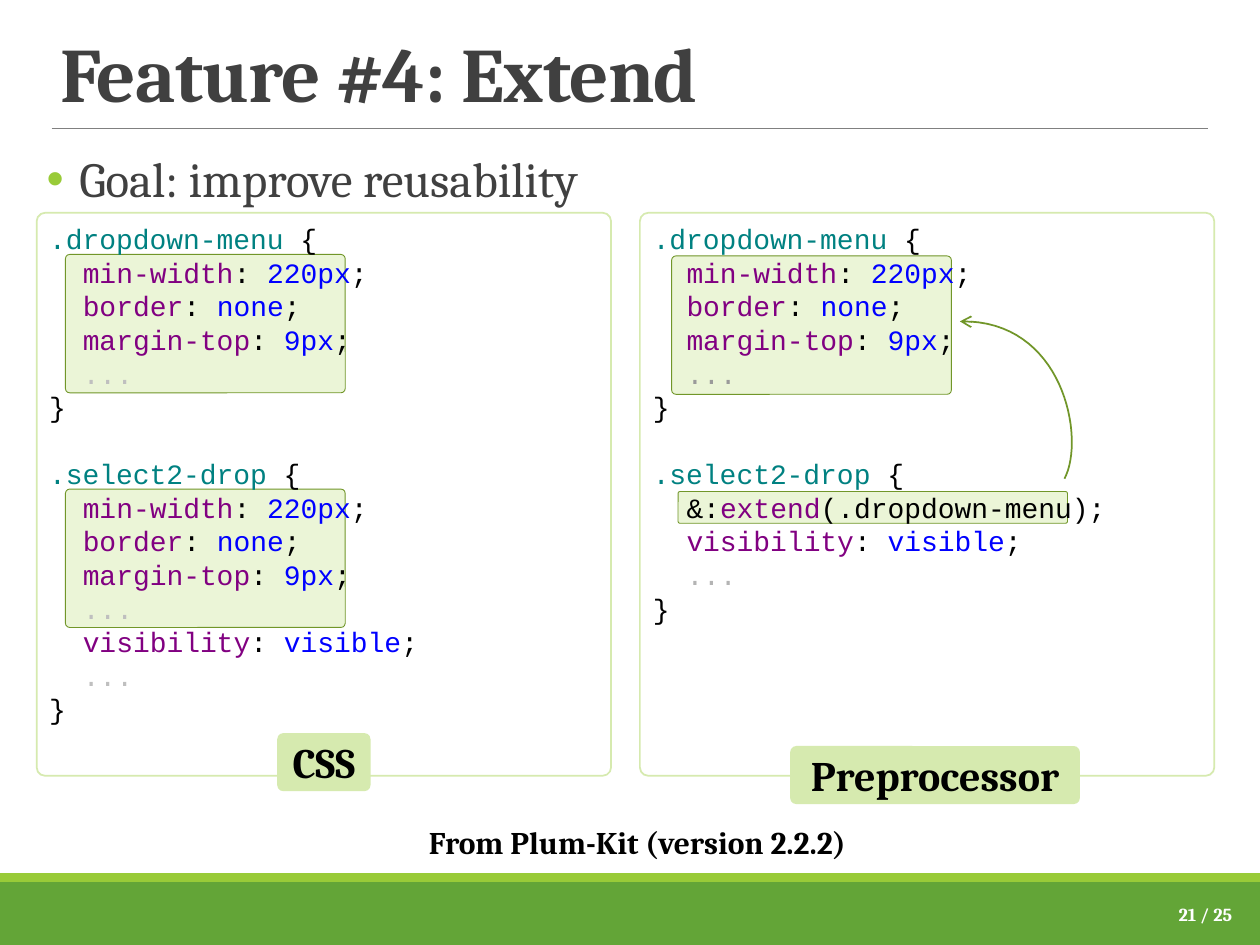
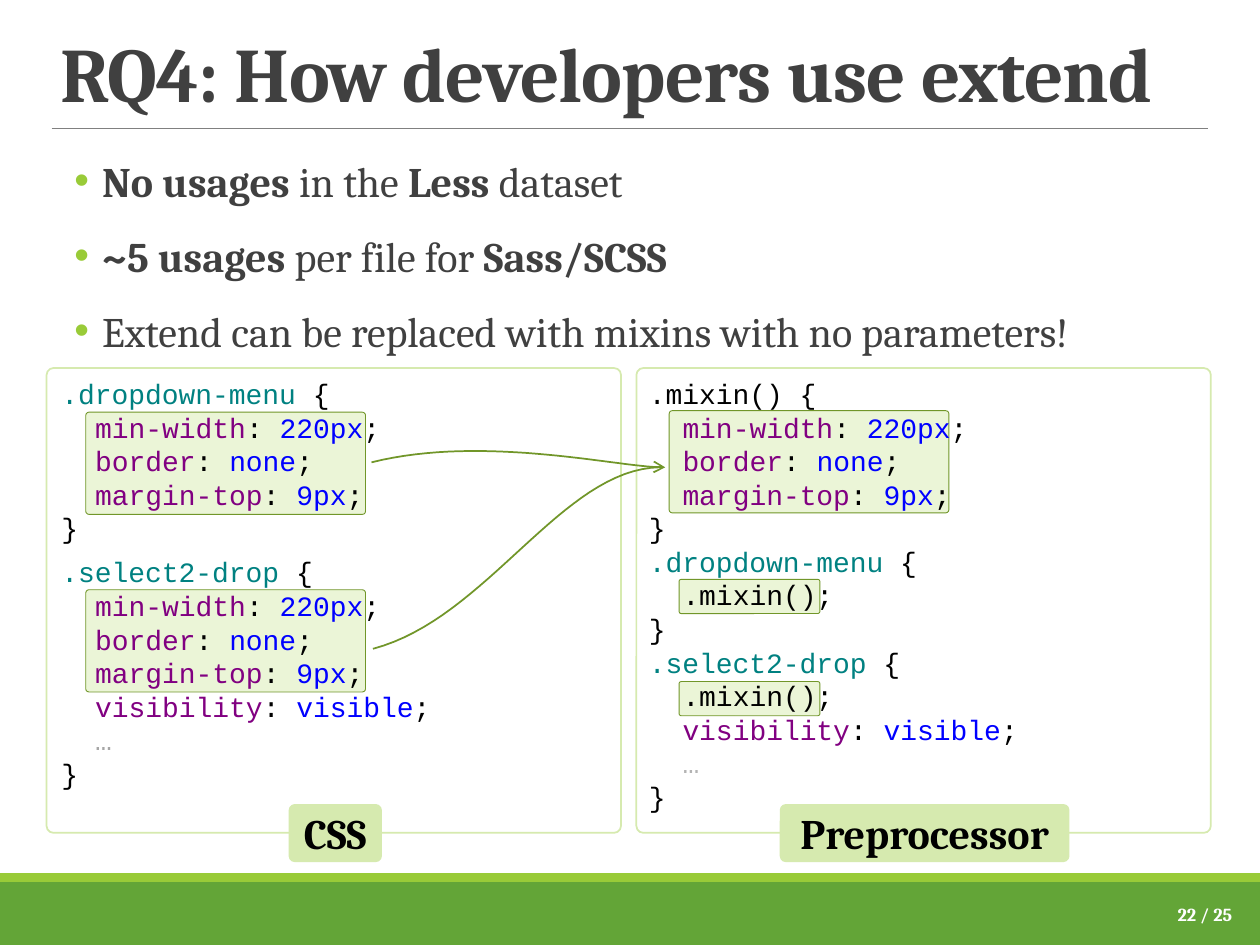
from dataclasses import dataclass
from pptx import Presentation
from pptx.dml.color import RGBColor
from pptx.enum.shapes import MSO_CONNECTOR, MSO_SHAPE
from pptx.enum.text import MSO_ANCHOR, PP_ALIGN
from pptx.oxml.ns import qn
from pptx.util import Cm, Pt
from lxml.etree import SubElement


@dataclass(frozen=True)
class Theme:
    green: str = "63A537"
    lime: str = "99CB38"
    edge: str = "719629"
    pale: str = "EBF5D7"
    soft: str = "D6EAAF"
    rule: str = "808080"
    dark: str = "404040"
    ink: str = "000000"
    white: str = "FFFFFF"
    name: str = "008181"
    prop: str = "810081"
    value: str = "0000FF"
    serif: str = "Cambria"
    mono: str = "Courier New"
    dot: str = "Arial"
    title: float = 44
    lead: float = 28
    item: float = 24
    note: float = 18
    code: float = 16
    page: float = 10.5
    pitch: float = 19.2


THEME = Theme()


def color(code):
    return RGBColor.from_string(code)


def write(par, text, size=THEME.code, ink=THEME.ink, font=THEME.serif, bold=False, space=None):
    run = par.add_run()
    run.text = text
    run.font.size = Pt(size)
    run.font.name = font
    run.font.bold = bold
    run.font.color.rgb = color(ink)
    if space is not None:
        run._r.get_or_add_rPr().set("spc", str(space))


def indent(par, left, hang=0):
    props = par._p.get_or_add_pPr()
    props.set("marL", str(Cm(left)))
    props.set("indent", str(-Cm(hang)))
    return props


def pair(prop, value):
    return [(prop, THEME.prop), (": ", THEME.ink), (value, THEME.value), (";", THEME.ink)]


def plain(text, ink=THEME.ink):
    return [(text, ink)]


def block(name, *rows, gap=0, ink=THEME.name):
    head = [(name + " ", ink), ("{", THEME.ink)]
    return [(head, 0, gap), *((row, 0.68, 0) for row in rows), (plain("}"), 0, 0)]


class Deck:
    def __init__(self, theme):
        self.theme = theme
        self.show = Presentation()
        self.show.slide_width = Cm(25.4)
        self.show.slide_height = Cm(19.05)
        self.slide = None

    def start(self, title, page):
        look = self.theme
        self.slide = self.show.slides.add_slide(self.show.slide_layouts[6])
        self.shape(0, 17.78, 25.4, 1.27, fill=look.green)
        self.shape(0, 17.6, 25.4, 0.18, fill=look.lime)
        self.line(1.04, 2.59, 24.36, 2.59)
        frame = self.frame(0.97, 0.3, 23.55, 2.08, (0.25, 0), MSO_ANCHOR.BOTTOM)
        write(frame.paragraphs[0], title, size=look.title, ink=look.dark, bold=True, space=-50)
        frame = self.frame(22.35, 17.91, 2.74, 1.02, anchor=MSO_ANCHOR.MIDDLE)
        frame.paragraphs[0].alignment = PP_ALIGN.RIGHT
        write(frame.paragraphs[0], f"{page} / 25", size=look.page, ink=look.white, bold=True)

    def shape(self, x, y, w, h, fill=None, edge=None, width=0.5, round=None):
        kind = MSO_SHAPE.RECTANGLE if round is None else MSO_SHAPE.ROUNDED_RECTANGLE
        box = self.slide.shapes.add_shape(kind, Cm(x), Cm(y), Cm(w), Cm(h))
        box.shadow.inherit = False
        if round is not None:
            box.adjustments[0] = round
        if fill:
            box.fill.solid()
            box.fill.fore_color.rgb = color(fill)
        else:
            box.fill.background()
        if edge:
            box.line.color.rgb = color(edge)
            box.line.width = Pt(width)
        else:
            box.line.fill.background()
        return box

    def line(self, x, y, to_x, to_y):
        line = self.slide.shapes.add_connector(
            MSO_CONNECTOR.STRAIGHT, Cm(x), Cm(y), Cm(to_x), Cm(to_y))
        line.line.color.rgb = color(self.theme.rule)
        line.line.width = Pt(0.5)
        SubElement(line._element.spPr, qn("a:effectLst"))

    def frame(self, x, y, w, h, pad=(0.25, 0.13), anchor=MSO_ANCHOR.TOP):
        frame = self.slide.shapes.add_textbox(Cm(x), Cm(y), Cm(w), Cm(h)).text_frame
        frame.word_wrap = True
        frame.vertical_anchor = anchor
        frame.margin_left = frame.margin_right = Cm(pad[0])
        frame.margin_top = frame.margin_bottom = Cm(pad[1])
        return frame

    def rows(self, frame, items):
        for spot, item in enumerate(items):
            yield (frame.add_paragraph() if spot else frame.paragraphs[0]), item

    def list(self, items, size, left, hang, before, after, lines=None):
        look = self.theme
        frame = self.frame(0.94, 3, 23.55, 13.31, (0, 0.13))
        for par, runs in self.rows(frame, items):
            par.space_before = Pt(before)
            par.space_after = Pt(after)
            if lines:
                par.line_spacing = lines
            props = indent(par, left, hang)
            tint = SubElement(props, qn("a:buClr"))
            SubElement(tint, qn("a:srgbClr")).set("val", look.lime)
            SubElement(props, qn("a:buFont")).set("typeface", look.dot)
            SubElement(props, qn("a:buChar")).set("char", "•")
            for text, bold in runs:
                write(par, text, size=size, ink=look.dark, bold=bold)

    def code(self, x, y, w, h, lines):
        look = self.theme
        frame = self.frame(x, y, w, h, (0, 0))
        for par, (runs, left, gap) in self.rows(frame, lines):
            par.line_spacing = Pt(look.pitch)
            par.space_before = Pt(gap)
            indent(par, left)
            for text, ink in runs:
                write(par, text, ink=ink, font=look.mono)

    def mark(self, x, y, w, h, round=0.031):
        self.shape(x, y, w, h, fill=self.theme.pale, edge=self.theme.edge, round=round)

    def panel(self, x, y, h):
        self.shape(x, y, 11.58, h, edge=self.theme.soft, width=1, round=0.015)

    def label(self, text, x, y, w):
        frame = self.shape(x, y, w, 1.17, fill=self.theme.soft, round=0.105).text_frame
        frame.word_wrap = False
        frame.margin_top = frame.margin_bottom = 0
        frame.vertical_anchor = MSO_ANCHOR.MIDDLE
        frame.paragraphs[0].alignment = PP_ALIGN.CENTER
        write(frame.paragraphs[0], text, size=self.theme.item, bold=True)

    def note(self, text):
        par = self.frame(6.27, 16.46, 13.16, 1.02).paragraphs[0]
        par.alignment = PP_ALIGN.CENTER
        write(par, text, size=self.theme.note, bold=True)

    def curve(self, *knots, arrow=True, steps=32):
        dots = []
        for step in range(steps + 1):
            t = step / steps
            parts = ((1 - t) ** 3, 3 * t * (1 - t) ** 2, 3 * t * t * (1 - t), t ** 3)
            dots.append(tuple(Cm(sum(part * knot[axis] for part, knot in zip(parts, knots)))
                              for axis in (0, 1)))
        pen = self.slide.shapes.build_freeform(*dots[0])
        pen.add_line_segments(dots[1:], close=False)
        arc = pen.convert_to_shape()
        arc.shadow.inherit = False
        arc.fill.background()
        arc.line.color.rgb = color(self.theme.edge)
        arc.line.width = Pt(1)
        if arrow:
            SubElement(arc.line._get_or_add_ln(), qn("a:tailEnd")).set("type", "arrow")


SIZES = [pair("min-width", "220px"), pair("border", "none"), pair("margin-top", "9px")]
SEEN = pair("visibility", "visible")
MENU = ".dropdown-menu"
DROP = ".select2-drop"


def extend(deck):
    look = deck.theme
    deck.start("Feature #4: Extend", 21)
    for x, y in ((13.54, 5.16), (1.32, 9.86), (1.32, 5.13)):
        deck.mark(x, y, 5.64, 2.79)
    deck.mark(13.67, 9.91, 7.85, 0.64, round=0.064)
    deck.list([[("Goal: improve reusability", False)]], look.lead, 0.66, 0.66, 12, 6, lines=0.9)
    dots = plain("...", "BFBFBF")
    call = [("&:", look.ink), ("extend", look.prop), ("(.dropdown-menu);", look.ink)]
    deck.code(0.99, 4.47, 11.13, 10.26,
              block(MENU, *SIZES, dots)
              + block(DROP, *SIZES, dots, SEEN, dots, gap=look.pitch))
    deck.code(13.16, 4.47, 11.15, 8.2,
              block(MENU, *SIZES, plain("...", "9A9A9A"))
              + block(DROP, call, SEEN, plain("...", "B4B4B4"), gap=look.pitch))
    for x in (0.74, 12.9):
        deck.panel(x, 4.29, 11.35)
    deck.label("Preprocessor", 15.93, 15.04, 5.84)
    deck.label("CSS", 5.59, 14.78, 1.88)
    deck.note("From Plum-Kit (version 2.2.2)")
    deck.curve((21.46, 9.65), (21.89, 8.84), (21.44, 6.43), (19.35, 6.48))


def usage(deck):
    look = deck.theme
    deck.start("RQ4: How developers use extend", 22)
    deck.list([
        [("No usages ", True), ("in the ", False), ("Less", True), (" dataset", False)],
        [("~5 usages ", True), ("per file for ", False), ("Sass/SCSS", True)],
        [("Extend can be replaced with mixins with no parameters!", False)],
    ], look.item, 1.12, 0.56, 2, 12)
    for x, y in ((1.73, 11.89), (1.73, 8.31), (13.49, 8.28)):
        deck.mark(x, y, 5.64, 2.06)
    for y in (11.68, 13.74):
        deck.mark(13.69, y, 2.84, 0.69, round=0.064)
    call = plain(".mixin();")
    deck.code(1.24, 7.59, 11.13, 8.43,
              block(MENU, *SIZES)
              + block(DROP, *SIZES, SEEN, plain("…", "A6A6A6"), gap=6))
    deck.code(13.08, 7.59, 11.15, 8.89,
              block(".mixin()", *SIZES, ink=look.ink)
              + block(MENU, call)
              + block(DROP, call, SEEN, plain("…", "B4B4B4")))
    for x in (0.94, 12.83):
        deck.panel(x, 7.42, 9.37)
    deck.label("CSS", 5.82, 16.21, 1.88)
    deck.label("Preprocessor", 15.72, 16.21, 5.84)
    deck.curve((7.52, 13.08), (9.83, 12.47), (11.33, 9.45), (13.31, 9.42), arrow=False)
    deck.curve((7.49, 9.32), (9.8, 8.74), (12.6, 9.45), (13.41, 9.42))


def main():
    deck = Deck(THEME)
    extend(deck)
    usage(deck)
    deck.show.save("out.pptx")


if __name__ == "__main__":
    main()
